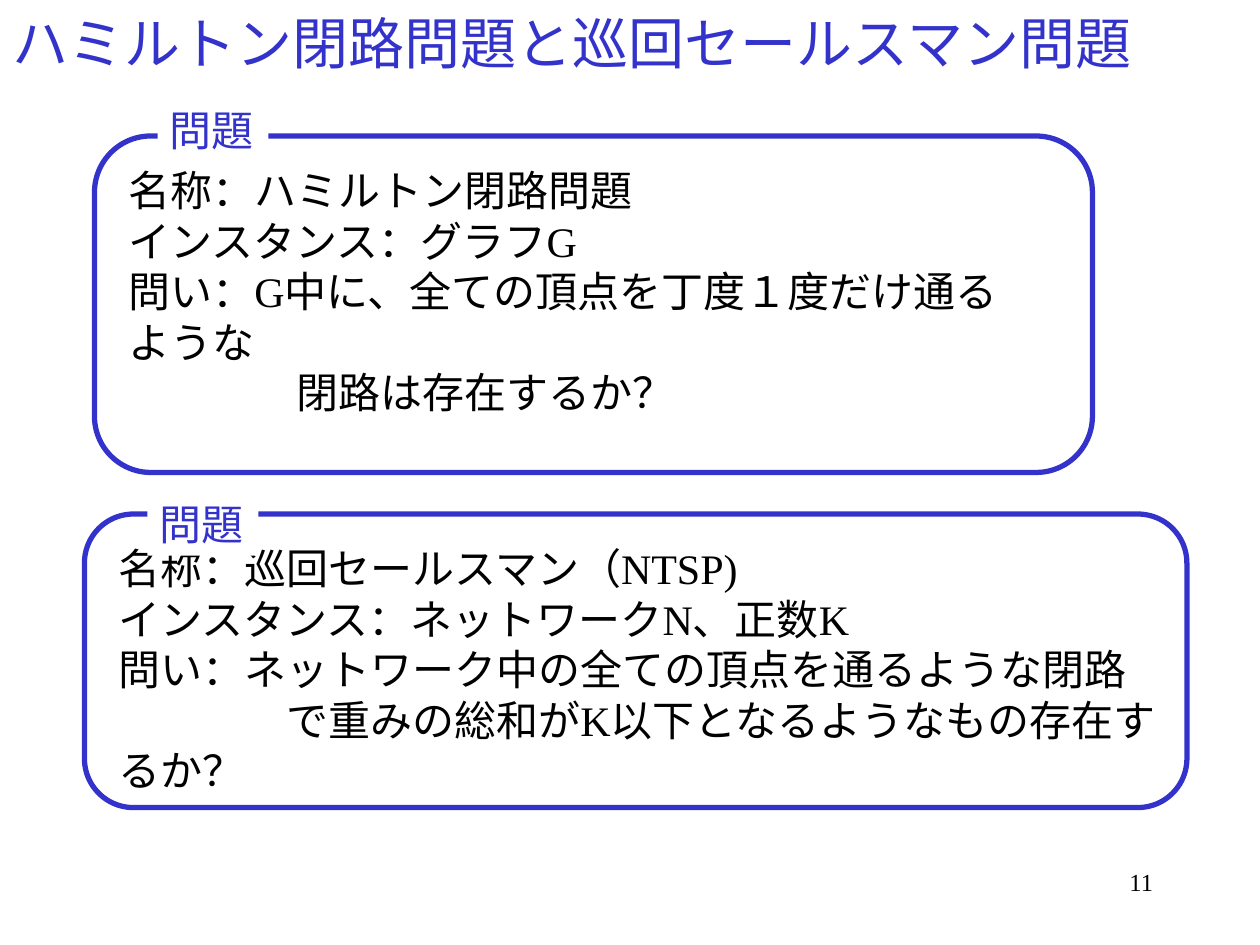
from dataclasses import dataclass

from pptx import Presentation
from pptx import util as u
from pptx.dml.color import RGBColor
from pptx.enum import shapes, text


@dataclass(frozen=True)
class Theme:
    font: str = "Times New Roman"
    accent: RGBColor = RGBColor(0x33, 0x33, 0xCC)
    ink: RGBColor = RGBColor(0, 0, 0)
    paper: RGBColor = RGBColor(255, 255, 255)
    title: int = 32
    body: int = 24
    number: int = 14
    border: int = 3


T = Theme()


def inches(box):
    return [u.Inches(v) for v in box]


def style(tf, size, color, align=text.PP_ALIGN.LEFT):
    """Format every run of a text frame alike."""
    for p in tf.paragraphs:
        p.alignment = align
        for r in p.runs:
            r.font.name = T.font
            r.font.size = u.Pt(size)
            r.font.color.rgb = color


def add_title(s, box, title):
    sp = s.shapes.title
    sp.left, sp.top, sp.width, sp.height = inches(box)
    tf = sp.text_frame
    tf.text = title
    tf.auto_size = text.MSO_AUTO_SIZE.NONE
    tf.vertical_anchor = text.MSO_ANCHOR.MIDDLE
    style(tf, T.title, T.accent)


def add_problem(s, box, lines, body_width, label_rise):
    """Rounded frame with its text and a label that breaks the top border."""
    x, y, w, h = box

    # Frame
    sp = s.shapes.add_shape(shapes.MSO_SHAPE.ROUNDED_RECTANGLE, *inches(box))
    sp.shadow.inherit = False
    sp.adjustments[0] = 0.167
    sp.fill.background()
    sp.line.color.rgb = T.accent
    sp.line.width = u.Pt(T.border)

    # Statement, whose last paragraph starts four characters in
    body = inches((x + 0.17, y + 0.18, body_width, 1.7))
    tf = s.shapes.add_textbox(*body).text_frame
    tf.word_wrap = True
    tf.text = "\n".join(lines)
    style(tf, T.body, T.ink)
    pPr = tf.paragraphs[-1]._p.get_or_add_pPr()
    pPr.set("marL", "0")
    pPr.set("indent", str(u.Pt(4 * T.body)))

    # Label
    label = inches((x + 0.5, y - label_rise, 0.88, 0.5))
    sp = s.shapes.add_shape(shapes.MSO_SHAPE.RECTANGLE, *label)
    sp.shadow.inherit = False
    sp.fill.solid()
    sp.fill.fore_color.rgb = T.paper
    sp.line.fill.background()
    tf = sp.text_frame
    tf.word_wrap = False
    tf.vertical_anchor = text.MSO_ANCHOR.TOP
    tf.text = "問題"
    style(tf, T.body, T.accent)


def add_number(s, box, number):
    tf = s.shapes.add_textbox(*inches(box)).text_frame
    tf.word_wrap = True
    tf.text = number
    style(tf, T.number, T.ink, text.PP_ALIGN.RIGHT)


def main():
    prs = Presentation()
    prs.slide_width, prs.slide_height = inches((10, 7.5))
    s = prs.slides.add_slide(prs.slide_layouts[5])

    add_title(s, (0, 0, 9.17, 0.67), "ハミルトン閉路問題と巡回セールスマン問題")
    add_problem(s, (0.75, 1.08, 7.92, 2.67), [
        "名称：ハミルトン閉路問題",
        "インスタンス：グラフG",
        "問い：G中に、全ての頂点を丁度１度だけ通るような",
        "閉路は存在するか？",
    ], body_width=7.34, label_rise=0.3)
    add_problem(s, (0.67, 4.08, 8.75, 2.33), [
        "名称：巡回セールスマン（NTSP)",
        "インスタンス：ネットワークN、正数K",
        "問い：ネットワーク中の全ての頂点を通るような閉路",
        "で重みの総和がK以下となるようなもの存在するか？",
    ], body_width=8.51, label_rise=0.17)
    add_number(s, (7.17, 6.83, 2.08, 0.5), "11")

    prs.save("out.pptx")


if __name__ == "__main__":
    main()
